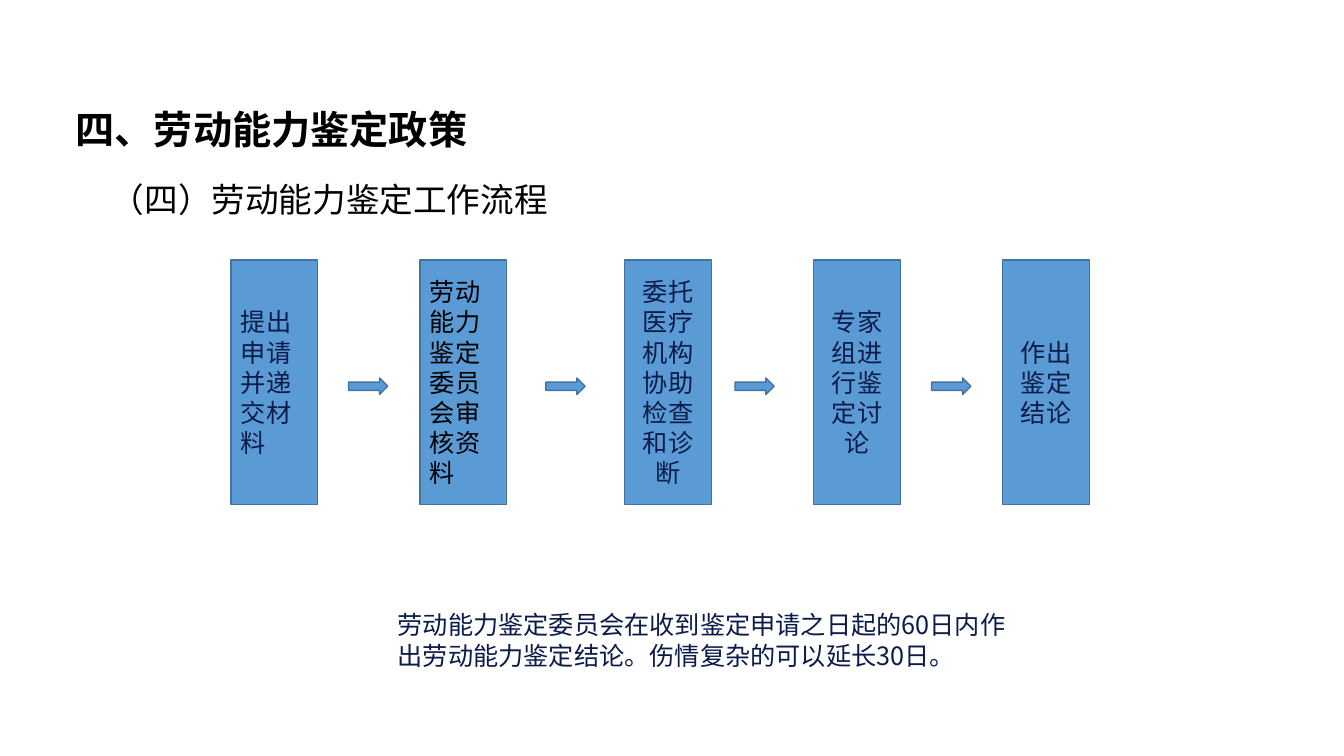
from lxml.etree import SubElement
from pptx import Presentation
from pptx.dml.color import RGBColor
from pptx.enum.shapes import MSO_SHAPE
from pptx.enum.text import MSO_ANCHOR, MSO_AUTO_SIZE, PP_ALIGN
from pptx.oxml.ns import qn
from pptx.util import Pt

CJK = "Noto Sans CJK SC"
NAVY, BLACK, BLUE, EDGE = "0B1B4A", "000000", "5B9BD5", "43739E"
STEP_TOP, STEP_W, STEP_H = 185.8, 62, 174.4
ARROW_TOP, ARROW_W, ARROW_H = 270, 28, 11.8
# left edge, wording, font, colour, alignment
STEPS = [
    (165, "提出申请并递交材料", "Arial", NAVY, PP_ALIGN.LEFT),
    (300, "劳动能力鉴定委员会审核资料", "Calibri", BLACK, PP_ALIGN.LEFT),
    (446.2, "委托医疗机构协助检查和诊断", "Arial", NAVY, PP_ALIGN.CENTER),
    (581.2, "专家组进行鉴定讨论", "Arial", NAVY, PP_ALIGN.CENTER),
    (716.2, "作出鉴定结论", "Arial", NAVY, PP_ALIGN.CENTER),
]
ARROW_LEFTS = [249, 390, 525, 665.5]


def color(hex_code):
    return RGBColor.from_string(hex_code)


def place(sp, left, top, width, height):
    sp.left, sp.top, sp.width, sp.height = Pt(left), Pt(top), Pt(width), Pt(height)


def write(sp, text, size=18, font=CJK, fill=NAVY, bold=False,
          align=PP_ALIGN.LEFT, anchor=MSO_ANCHOR.TOP, spacing=None):
    tf = sp.text_frame
    tf.word_wrap = True
    tf.vertical_anchor = anchor
    p = tf.paragraphs[0]
    p.alignment = align
    p.line_spacing = spacing
    r = p.add_run()
    r.text = text
    r.font.size, r.font.name, r.font.bold = Pt(size), font, bold
    r.font.color.rgb = color(fill)
    SubElement(r.font._element, qn("a:ea")).set("typeface", CJK)


def add_block(slide, kind, left, top, width, height):
    sp = slide.shapes.add_shape(kind, Pt(left), Pt(top), Pt(width), Pt(height))
    sp.shadow.inherit = False
    sp.fill.solid()
    sp.fill.fore_color.rgb = color(BLUE)
    sp.line.color.rgb = color(EDGE)
    sp.line.width = Pt(1)
    return sp


def add_text(slide, text, left, top, width, height, **style):
    sp = slide.shapes.add_textbox(Pt(left), Pt(top), Pt(width), Pt(height))
    write(sp, text, **style)
    sp.text_frame.auto_size = MSO_AUTO_SIZE.SHAPE_TO_FIT_TEXT


def add_title(slide, left, top, width, height):
    title = slide.shapes.title
    place(title, left, top, width, height)
    write(title, "（四）劳动能力鉴定工作流程", size=24, font="Calibri", fill=BLACK,
          anchor=MSO_ANCHOR.MIDDLE, spacing=0.9)


def add_process(slide):
    for left, text, font, fill, align in STEPS:
        sp = add_block(slide, MSO_SHAPE.RECTANGLE, left, STEP_TOP, STEP_W, STEP_H)
        write(sp, text, font=font, fill=fill, align=align, anchor=MSO_ANCHOR.MIDDLE)
    for left in ARROW_LEFTS:
        add_block(slide, MSO_SHAPE.RIGHT_ARROW, left, ARROW_TOP, ARROW_W, ARROW_H)


def main():
    prs = Presentation()
    prs.slide_width, prs.slide_height = Pt(960), Pt(540)
    slide = prs.slides.add_slide(prs.slide_layouts[5])
    add_title(slide, 72, 113, 828, 62)
    add_process(slide)
    add_text(slide, "劳动能力鉴定委员会在收到鉴定申请之日起的60日内"
             "作出劳动能力鉴定结论。伤情复杂的可以延长30日。", 277, 432, 450, 51)
    add_text(slide, "四、劳动能力鉴定政策", 47, 72, 325.4, 41,
             size=28, fill=BLACK, bold=True)
    prs.save("out.pptx")


if __name__ == "__main__":
    main()
